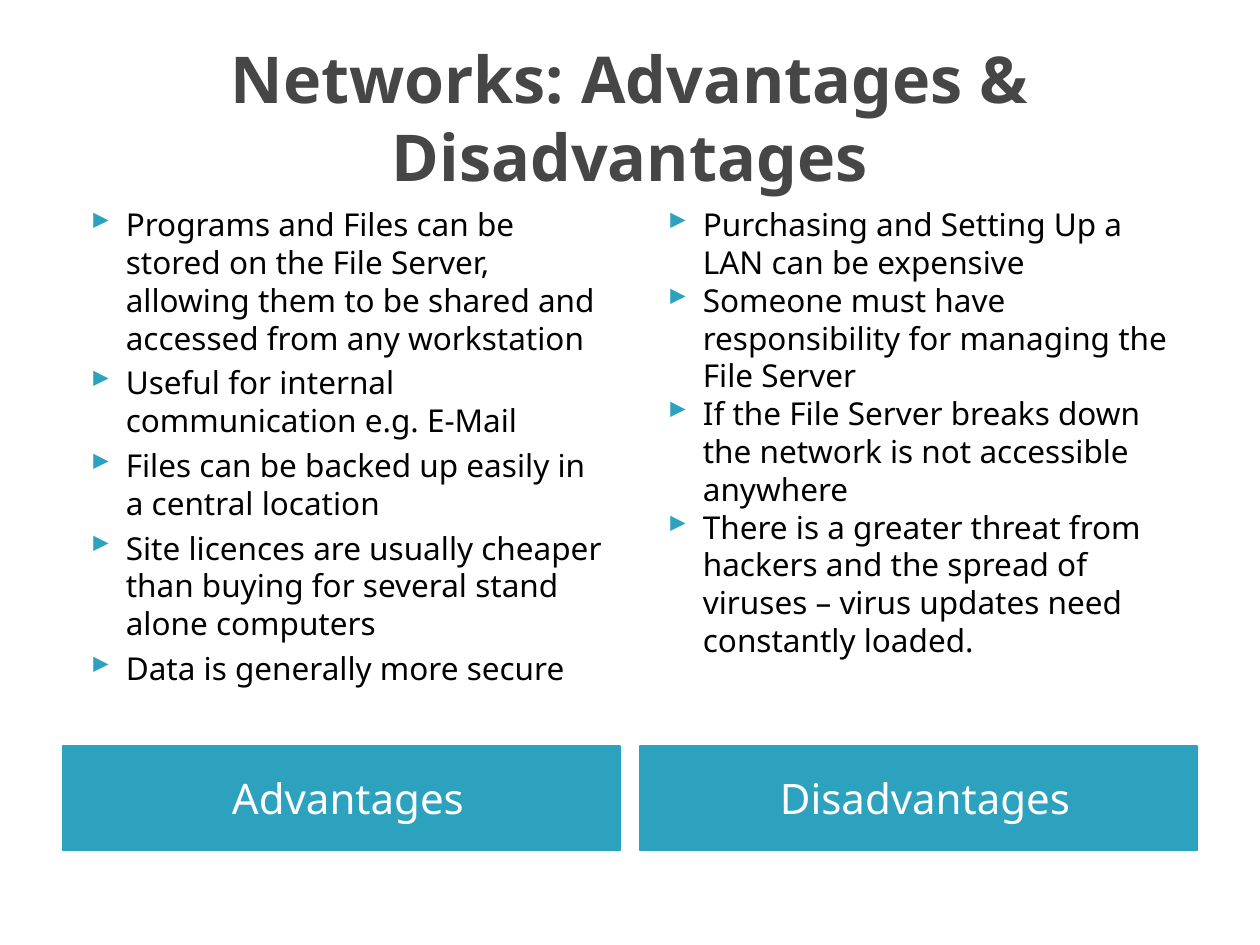
import pptx
import pptx.dml.color
import pptx.enum.shapes
import pptx.enum.text
import pptx.util
from lxml import etree
from pptx.oxml.ns import qn

Inches, Pt = pptx.util.Inches, pptx.util.Pt
RGBColor = pptx.dml.color.RGBColor
PP_ALIGN, MSO_ANCHOR = pptx.enum.text.PP_ALIGN, pptx.enum.text.MSO_ANCHOR

TEAL = RGBColor(0x2D, 0xA2, 0xBF)
GRAY = RGBColor(0x46, 0x46, 0x46)
BLACK = RGBColor(0, 0, 0)
WHITE = RGBColor(0xFF, 0xFF, 0xFF)


def write(p, text, size=18, color=BLACK, bold=False, font="Noto Sans",
          align=PP_ALIGN.LEFT, before=0):
    p.alignment = align
    p.space_before = Pt(before)
    r = p.add_run()
    r.text = text
    r.font.name, r.font.size, r.font.bold = font, Pt(size), bold
    r.font.color.rgb = color


def add_bullet(p, color=TEAL, left=0.4, hanging=0.28):
    pPr = p._p.get_or_add_pPr()
    pPr.set("marL", str(Inches(left)))
    pPr.set("indent", str(-Inches(hanging)))
    buClr = etree.SubElement(pPr, qn("a:buClr"))
    etree.SubElement(buClr, qn("a:srgbClr"), val=str(color))
    # In this symbol font the brace is a right-pointing triangle
    etree.SubElement(pPr, qn("a:buFont"), typeface="Wingdings 3", charset="2")
    etree.SubElement(pPr, qn("a:buChar"), char="}")


class SlideBuilder:
    accent = TEAL

    def __init__(self, s):
        self.s = s

    def text_box(self, x, y, w, h, anchor=MSO_ANCHOR.TOP):
        sp = self.s.shapes.add_textbox(Inches(x), Inches(y), Inches(w), Inches(h))
        tf = sp.text_frame
        tf.word_wrap = True
        tf.vertical_anchor = anchor
        return tf

    def title(self, text, x, y, w, h):
        tf = self.text_box(x, y, w, h, MSO_ANCHOR.MIDDLE)
        write(tf.paragraphs[0], text, size=36.9, color=GRAY, bold=True,
              align=PP_ALIGN.CENTER)

    def bullets(self, items, x, y, w, h, gap):
        tf = self.text_box(x, y, w, h)
        for i, item in enumerate(items):
            p = tf.add_paragraph() if i else tf.paragraphs[0]
            add_bullet(p, self.accent)
            write(p, item, before=gap if i else 0)

    def label(self, text, x, y, w, h):
        sp = self.s.shapes.add_shape(pptx.enum.shapes.MSO_SHAPE.RECTANGLE,
                                     Inches(x), Inches(y), Inches(w), Inches(h))
        sp.shadow.inherit = False
        sp.fill.solid()
        sp.fill.fore_color.rgb = self.accent
        sp.line.color.rgb = self.accent
        sp.line.width = Pt(0.75)
        tf = sp.text_frame
        tf.word_wrap = True
        tf.margin_left = Inches(0.2)
        tf.vertical_anchor = MSO_ANCHOR.MIDDLE
        write(tf.paragraphs[0], text, size=24, color=WHITE, align=PP_ALIGN.CENTER)


# Heading, left edge, gap between bullets in points, bullets
COLUMNS = [
    ("Advantages", 0.5, 4, [
        "Programs and Files can be stored on the File Server, allowing them "
        "to be shared and accessed from any workstation",
        "Useful for internal communication e.g. E-Mail",
        "Files can be backed up easily in a central location",
        "Site licences are usually cheaper than buying for several stand "
        "alone computers",
        "Data is generally more secure",
    ]),
    ("Disadvantages", 5.08, 0, [
        "Purchasing and Setting Up a LAN can be expensive",
        "Someone must have responsibility for managing the File Server",
        "If the File Server breaks down the network is not accessible anywhere",
        "There is a greater threat from hackers and the spread of viruses – "
        "virus updates need constantly loaded.",
    ]),
]
COLUMN_WIDTH = 4.42


def main():
    prs = pptx.Presentation()
    prs.slide_width, prs.slide_height = Inches(10), Inches(7.5)
    slide = SlideBuilder(prs.slides.add_slide(prs.slide_layouts[6]))

    # Title
    slide.title("Networks: Advantages & Disadvantages", 0.5, 0.3, 9, 1.25)

    # Two columns, each with its label underneath
    for heading, x, gap, items in COLUMNS:
        slide.label(heading, x, 5.92, COLUMN_WIDTH, 0.83)
        slide.bullets(items, x, 1.58, COLUMN_WIDTH, 4.31, gap)

    prs.save("out.pptx")


if __name__ == "__main__":
    main()
